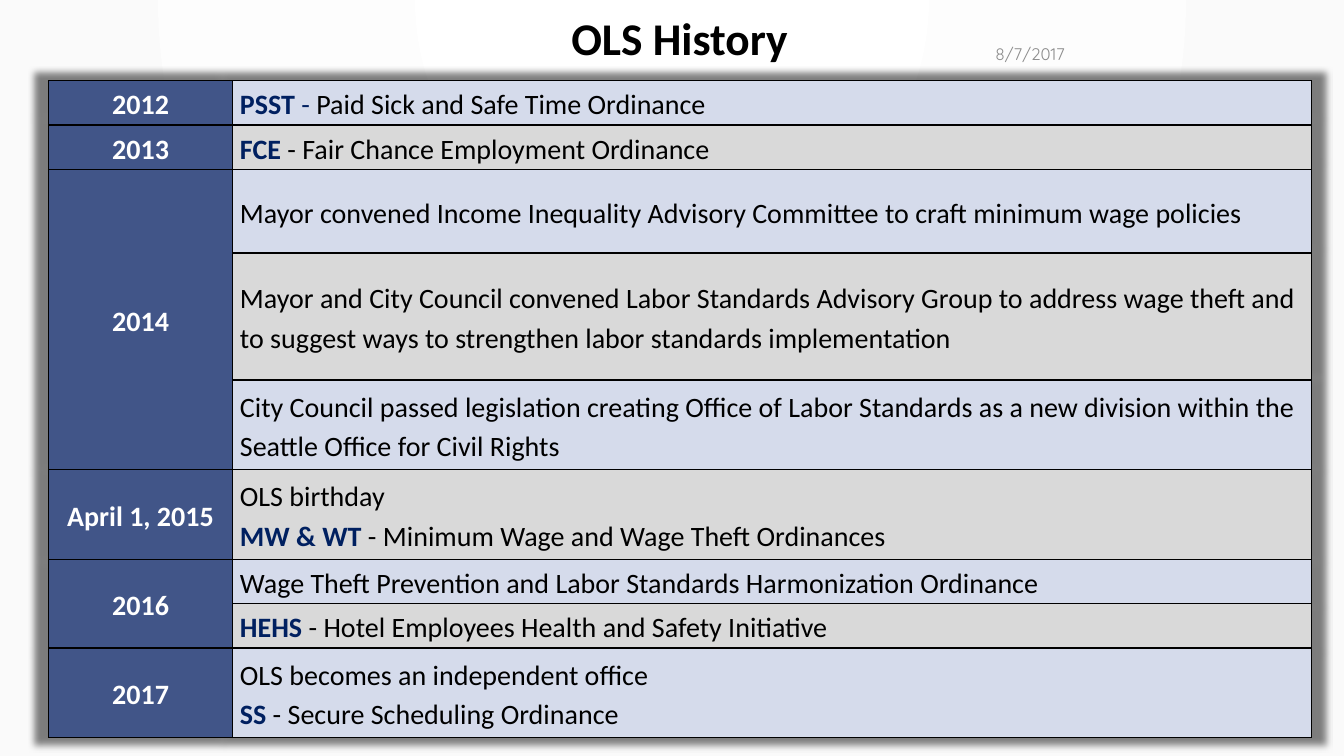
from lxml import etree
from pptx import Presentation
from pptx import util as u
from pptx.dml.color import RGBColor
from pptx.enum import text
from pptx.oxml import parse_xml
from pptx.oxml.ns import nsdecls, qn

COLORS = {
    "black": "000000", "white": "FFFFFF", "edge": "FAFAFA", "year": "415588",
    "blue": "D5DBEB", "gray": "D9D9D9", "navy": "002060", "date": "8C8C8C",
}
CENTER, LEFT, RIGHT = (text.PP_ALIGN.CENTER, text.PP_ALIGN.LEFT,
                       text.PP_ALIGN.RIGHT)


def law(code, name):
    """One line: a bold navy abbreviation, then the ordinance in black."""
    return [(code, "navy", True), (f" - {name}", "black", False)]


def plain(words):
    return [(words, "black", False)]


# Year, then its events; an event is a row height and its lines.
HISTORY = [
    ("2012", [(0.44, [[("PSST", "navy", True), (" - ", "navy", False),
                       ("Paid Sick and Safe Time Ordinance", "black", False)]])]),
    ("2013", [(0.44, [law("FCE", "Fair Chance Employment Ordinance")])]),
    ("2014", [
        (0.83, [plain("Mayor convened Income Inequality Advisory Committee "
                      "to craft minimum wage policies")]),
        (1.26, [plain("Mayor and City Council convened Labor Standards Advisory "
                      "Group to address wage theft and to suggest ways to "
                      "strengthen labor standards implementation")]),
        (0.89, [plain("City Council passed legislation creating Office of Labor "
                      "Standards as a new division within the Seattle Office "
                      "for Civil Rights")]),
    ]),
    ("April 1, 2015", [(0.89, [
        plain("OLS birthday"),
        law("MW & WT", "Minimum Wage and Wage Theft Ordinances")])]),
    ("2016", [
        (0.44, [plain("Wage Theft Prevention and Labor Standards "
                      "Harmonization Ordinance")]),
        (0.44, [law("HEHS", "Hotel Employees Health and Safety Initiative")]),
    ]),
    ("2017", [(0.89, [plain("OLS becomes an independent office"),
                      law("SS", "Secure Scheduling Ordinance")])]),
]


class Deck:
    def __init__(self, width, height):
        self.prs = Presentation()
        self.prs.slide_width = u.Inches(width)
        self.prs.slide_height = u.Inches(height)
        self.slide = self.prs.slides.add_slide(self.prs.slide_layouts[6])

    def rgb(self, name):
        return RGBColor.from_string(COLORS[name])

    def background(self, inner, outer):
        """Gradient spreading sideways from the middle of the slide."""
        fill = self.slide.background.fill
        fill.gradient()
        for stop, name in zip(fill.gradient_stops, (inner, outer)):
            stop.color.rgb = self.rgb(name)
        grad = self.slide.element.find(".//" + qn("a:gradFill"))
        grad.replace(grad.find(qn("a:lin")), parse_xml(
            f'<a:path {nsdecls("a")} path="circle">'
            '<a:fillToRect l="43000" t="0" r="43000" b="100000"/></a:path>'))

    def add_lines(self, tf, lines, size, font="Calibri", align=LEFT, spacing=1.0):
        for i, runs in enumerate(lines):
            p = tf.add_paragraph() if i else tf.paragraphs[0]
            p.alignment, p.line_spacing = align, spacing
            p.font.size, p.font.name = u.Pt(size), font
            for words, color, bold in runs:
                r = p.add_run()
                r.text = words
                r.font.bold = bold
                r.font.color.rgb = self.rgb(color)

    def label(self, box, run, size, **style):
        tf = self.slide.shapes.add_textbox(*map(u.Inches, box)).text_frame
        tf.word_wrap = True
        tf.vertical_anchor = text.MSO_ANCHOR.MIDDLE
        self.add_lines(tf, [[run]], size, **style)

    def cell(self, cell, fill, lines=(), align=LEFT):
        cell.margin_left = cell.margin_right = u.Inches(0.07)
        cell.margin_top = cell.margin_bottom = 0
        cell.vertical_anchor = text.MSO_ANCHOR.MIDDLE
        cell.fill.solid()
        cell.fill.fore_color.rgb = self.rgb(fill)
        tc_pr = cell._tc.get_or_add_tcPr()
        for i, side in enumerate("LRTB"):
            tc_pr.insert(i, parse_xml(
                f'<a:ln{side} {nsdecls("a")} w="12700"><a:solidFill>'
                f'<a:srgbClr val="{COLORS["black"]}"/></a:solidFill></a:ln{side}>'))
        self.add_lines(cell.text_frame, lines, 20, align=align, spacing=1.15)

    def timeline(self, box, widths, history):
        heights = [height for _, events in history for height, _ in events]
        frame = self.slide.shapes.add_table(
            len(heights), len(widths), *map(u.Inches, box))
        table = frame.table
        table.first_row = table.horz_banding = False
        for column, width in zip(table.columns, widths):
            column.width = u.Inches(width)
        for row, height in zip(table.rows, heights):
            row.height = u.Inches(height)
        self.glow(table)
        top = 0
        for year, events in history:
            for i, (_, lines) in enumerate(events):
                row = top + i
                heading = [] if i else [[(year, "white", True)]]
                self.cell(table.cell(row, 0), "year", heading, CENTER)
                self.cell(table.cell(row, 1), ("blue", "gray")[row % 2], lines)
            if len(events) > 1:
                table.cell(top, 0).merge(table.cell(row, 0))
            top += len(events)

    def glow(self, table):
        """Soft shadow that shows evenly around the table."""
        effects = etree.Element(qn("a:effectLst"))
        effects.append(parse_xml(
            f'<a:outerShdw {nsdecls("a")} blurRad="63500" sx="102000" '
            'sy="102000" algn="ctr" rotWithShape="0">'
            f'<a:srgbClr val="{COLORS["black"]}"><a:alpha val="50000"/>'
            '</a:srgbClr></a:outerShdw>'))
        table._tbl.tblPr.insert(0, effects)


def main():
    deck = Deck(13.33, 7.5)
    deck.background("white", "edge")
    deck.label((1.49, 0.1, 10.5, 0.6), ("OLS History", "black", True), 32.4,
               align=CENTER, spacing=0.9)
    deck.timeline((0.48, 0.8, 12.52, 6.5), (1.83, 10.7), HISTORY)
    deck.label((7.91, 0.36, 2.75, 0.34), ("8/7/2017", "date", False), 12,
               font="Quicksand", align=RIGHT)
    deck.prs.save("out.pptx")


if __name__ == "__main__":
    main()
